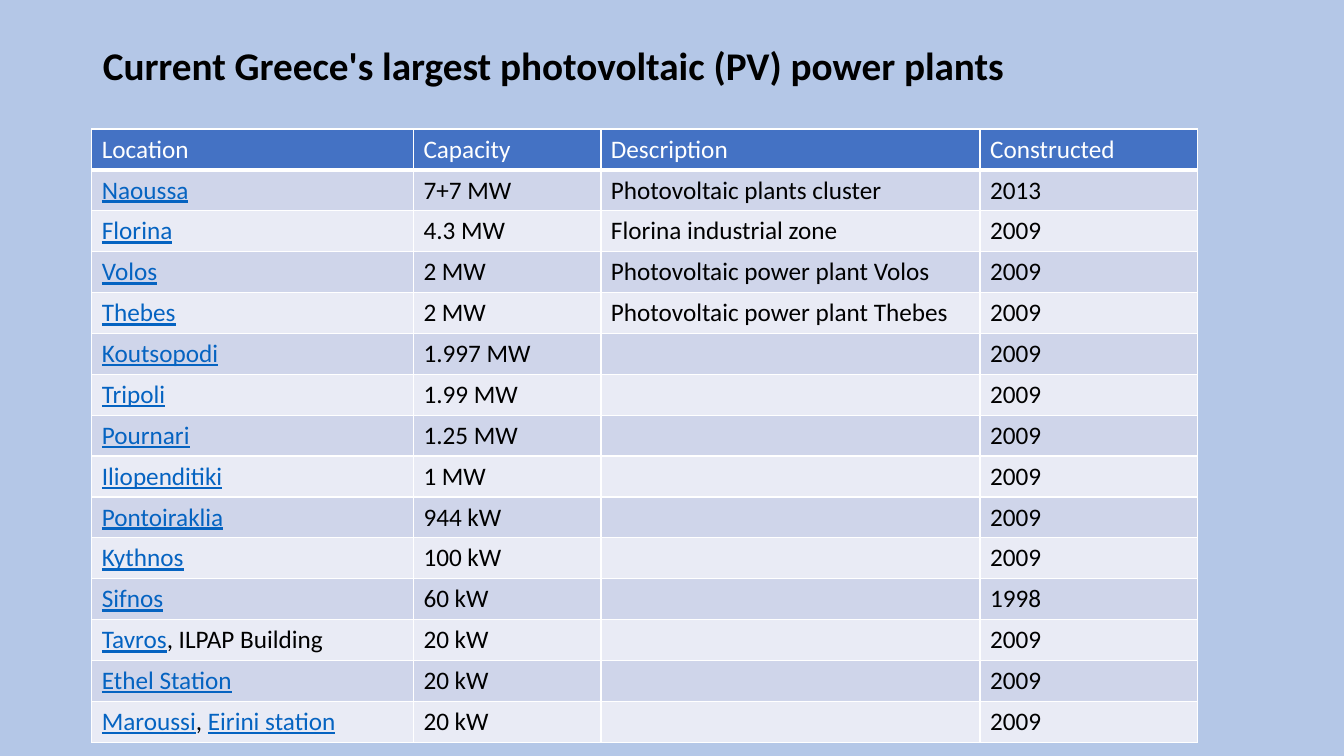
from lxml import etree
from pptx import Presentation
from pptx import util as u
from pptx.dml.color import RGBColor
from pptx.enum import text
from pptx.oxml.ns import qn

HEADERS = ["Location", "Capacity", "Description", "Constructed"]
# In a location, "|" separates linked names (even parts) from plain text (odd parts)
PLANTS = [
    ("Naoussa", "7+7 MW", "Photovoltaic plants cluster", "2013"),
    ("Florina", "4.3 MW", "Florina industrial zone", "2009"),
    ("Volos", "2 MW", "Photovoltaic power plant Volos", "2009"),
    ("Thebes", "2 MW", "Photovoltaic power plant Thebes", "2009"),
    ("Koutsopodi", "1.997 MW", "", "2009"),
    ("Tripoli", "1.99 MW", "", "2009"),
    ("Pournari", "1.25 MW", "", "2009"),
    ("Iliopenditiki", "1 MW", "", "2009"),
    ("Pontoiraklia", "944 kW", "", "2009"),
    ("Kythnos", "100 kW", "", "2009"),
    ("Sifnos", "60 kW", "", "1998"),
    ("Tavros|, ILPAP Building", "20 kW", "", "2009"),
    ("Ethel Station", "20 kW", "", "2009"),
    ("Maroussi|, |Eirini station", "20 kW", "", "2009"),
]


def rgb(value):
    return RGBColor.from_string(value)


def write(p, words, size=18, color="000000", bold=False, underline=False, font="Calibri"):
    r = p.add_run()
    r.text = words
    f = r.font
    f.name, f.size, f.bold, f.underline = font, u.Pt(size), bold, underline
    f.color.rgb = rgb(color)


class Deck:
    HEAD, BANDS = "4472C4", ("CFD5EA", "E9EBF5")
    WHITE, LINK, BACK = "FFFFFF", "0563C1", "B4C7E7"

    def __init__(self):
        self.prs = Presentation()
        self.prs.slide_width, self.prs.slide_height = u.Inches(13.33), u.Inches(7.5)
        self.s = self.prs.slides.add_slide(self.prs.slide_layouts[5])
        self.s.background.fill.solid()
        self.s.background.fill.fore_color.rgb = rgb(self.BACK)

    # Lengths are percentages of the slide's width or height
    def x(self, share):
        return round(self.prs.slide_width * share / 100)

    def y(self, share):
        return round(self.prs.slide_height * share / 100)

    def title(self, words, left, top, width, height):
        sp = self.s.shapes.title
        sp.left, sp.top = self.x(left), self.y(top)
        sp.width, sp.height = self.x(width), self.y(height)
        tf = sp.text_frame
        tf.word_wrap = True
        tf.auto_size = text.MSO_AUTO_SIZE.NONE
        tf.vertical_anchor = text.MSO_ANCHOR.MIDDLE
        tf.margin_bottom = self.y(6.3)
        p = tf.paragraphs[0]
        p.alignment, p.line_spacing = text.PP_ALIGN.LEFT, 0.9
        write(p, words, size=28, bold=True)

    def border(self, cell, bottom):
        tc_pr = cell._tc.get_or_add_tcPr()
        for side, points in (("L", 1), ("R", 1), ("T", 1), ("B", bottom)):
            ln = etree.SubElement(tc_pr, qn(f"a:ln{side}"), w=str(u.Pt(points)))
            fill = etree.SubElement(ln, qn("a:solidFill"))
            etree.SubElement(fill, qn("a:srgbClr"), val=self.WHITE)

    def cell(self, cell, fill, bottom=1):
        self.border(cell, bottom)
        cell.fill.solid()
        cell.fill.fore_color.rgb = rgb(fill)
        cell.vertical_anchor = text.MSO_ANCHOR.MIDDLE
        return cell.text_frame.paragraphs[0]

    def table(self, headers, rows, left, top, widths, height):
        frame = self.s.shapes.add_table(len(rows) + 1, len(headers), self.x(left),
                                        self.y(top), self.x(sum(widths)), self.y(height))
        tbl = frame.table
        tbl.horz_banding = False
        for column, width in zip(tbl.columns, widths):
            column.width = self.x(width)
        # Header row
        for j, words in enumerate(headers):
            write(self.cell(tbl.cell(0, j), self.HEAD, bottom=3), words, color=self.WHITE)
        # Banded body, with linked names in the first column
        for i, row in enumerate(rows):
            for j, words in enumerate(row):
                p = self.cell(tbl.cell(i + 1, j), self.BANDS[i % 2])
                for k, part in enumerate(words.split("|") if words else []):
                    linked = j == 0 and k % 2 == 0
                    write(p, part, color=self.LINK if linked else "000000", underline=linked)


def main():
    deck = Deck()
    deck.title("Current Greece's largest photovoltaic (PV) power plants", 6.9, 2.13, 86.27, 19.33)
    deck.table(HEADERS, PLANTS, 6.83, 17.07, (23.93, 13.95, 28.21, 16.2), 80)
    deck.prs.save("out.pptx")


if __name__ == "__main__":
    main()
